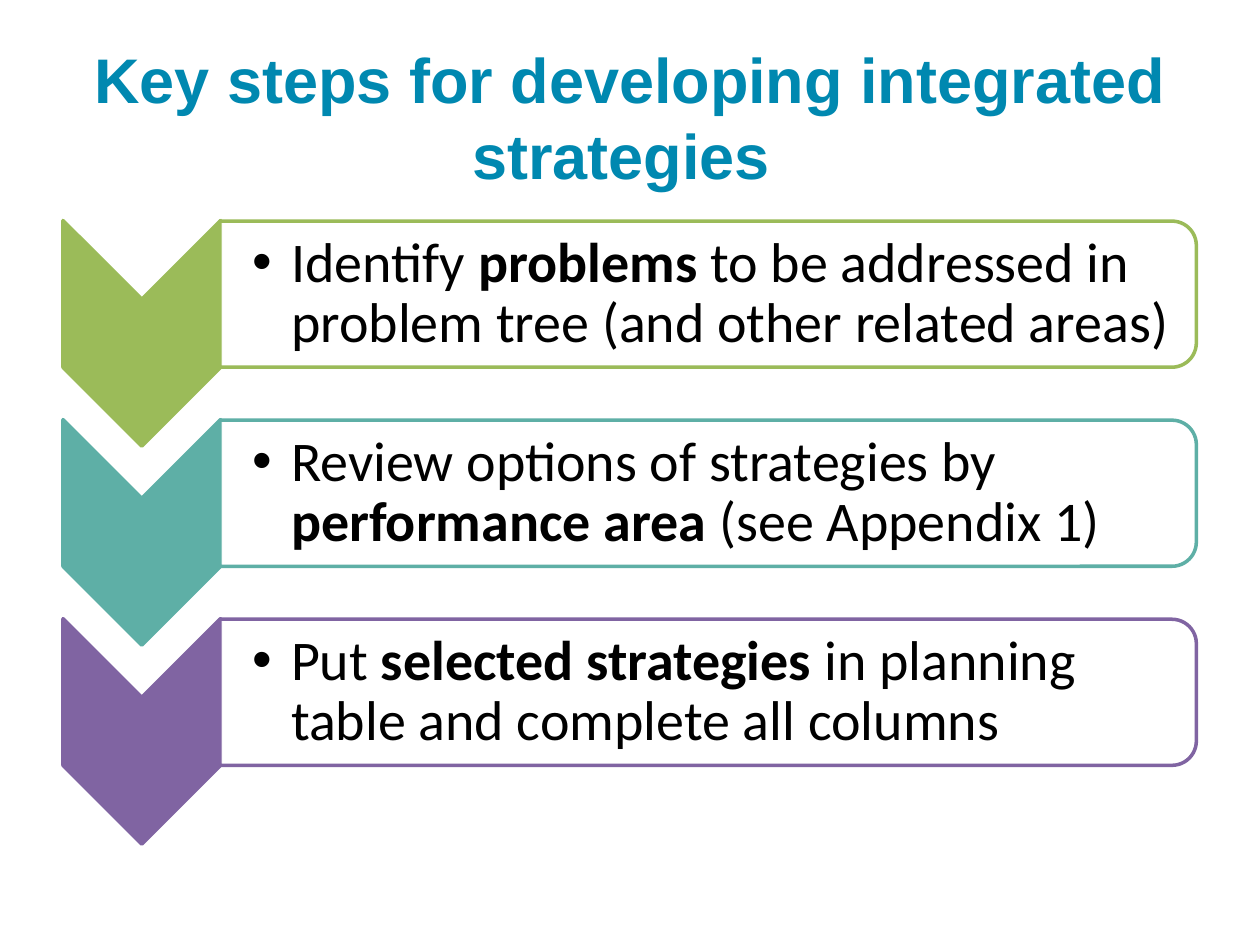
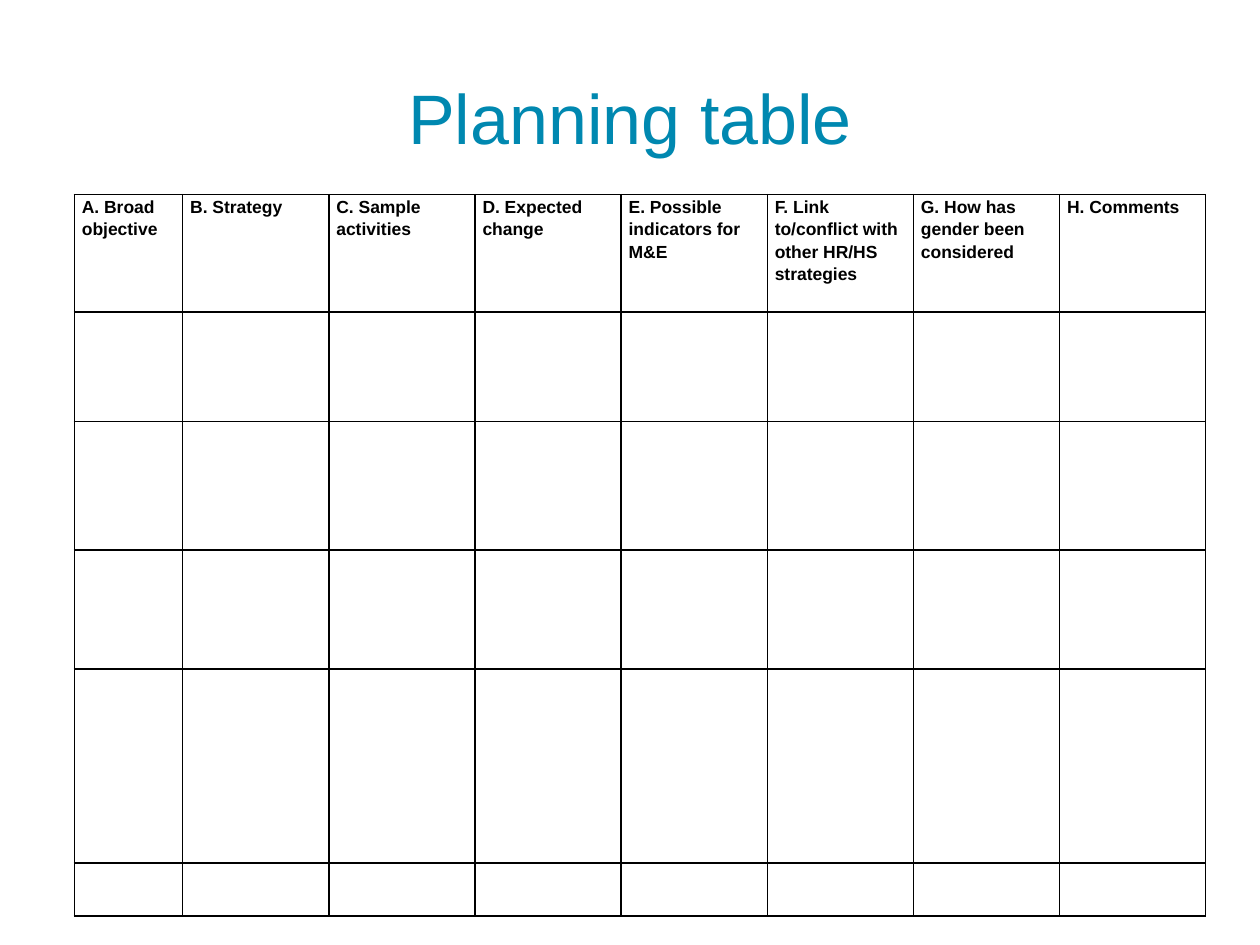
"""Build two slides on strategy planning: the key steps and the planning table."""
import pptx
import pptx.dml.color
import pptx.enum.shapes
import pptx.enum.text
import pptx.oxml
import pptx.oxml.ns
import pptx.util
from lxml import etree

RGB = pptx.dml.color.RGBColor
Pt = pptx.util.Pt
MSO = pptx.enum.shapes.MSO_SHAPE
ALIGN = pptx.enum.text.PP_ALIGN
ANCHOR = pptx.enum.text.MSO_ANCHOR
qn = pptx.oxml.ns.qn

BLUE = RGB(0x00, 0x88, 0xB0)
GREEN = RGB(0x9B, 0xBB, 0x59)
TEAL = RGB(0x5E, 0xAF, 0xA6)
PURPLE = RGB(0x80, 0x64, 0xA2)
BLACK = RGB(0, 0, 0)
WHITE = RGB(255, 255, 255)

GRID_COLS = 20
STEP_TOP = 3.5
STEP_PITCH = 3.16
STEPS = [
    (GREEN, "Identify *problems* to be addressed in problem tree (and other related areas)"),
    (TEAL, "Review options of strategies by *performance area *(see Appendix 1)"),
    (PURPLE, "Put *selected strategies *in planning table and complete all columns"),
]
HEADERS = [
    "A. Broad objective", "B. Strategy", "C. Sample activities", "D. Expected change",
    "E. Possible indicators for M&E", "F. Link to/conflict with other HR/HS strategies",
    "G. How has gender been considered", "H. Comments",
]
COL_WIDTHS = [1.72] + [2.32] * 7
ROW_HEIGHTS = [1.86, 1.74, 2.04, 1.89, 3.08, 0.84]


def write(tf, text, size=18, font="Arial", color=BLACK, bold=False, align=ALIGN.LEFT,
          spacing=1.0, before=0, after=0, hang=0):
    """Fill a text frame; words between asterisks turn bold."""
    p = tf.paragraphs[0]
    p.alignment, p.line_spacing = align, spacing
    p.space_before, p.space_after = Pt(before), Pt(after)
    for i, part in enumerate(text.split("*")):
        r = p.add_run()
        r.text = part
        r.font.size, r.font.name = Pt(size), font
        r.font.color.rgb = color
        r.font.bold = bold or i % 2 == 1
    if hang:
        pPr = p._p.get_or_add_pPr()
        pPr.set("marL", str(hang))
        pPr.set("indent", str(-hang))
        etree.SubElement(pPr, qn("a:buFont")).set("typeface", "Arial")
        etree.SubElement(pPr, qn("a:buChar")).set("char", "•")


class Deck:
    """Hold the style, the grid and the current slide."""

    def __init__(self):
        """Start a 10 by 7.5 inch presentation."""
        self.prs = pptx.Presentation()
        self.prs.slide_width = pptx.util.Inches(10)
        self.prs.slide_height = pptx.util.Inches(7.5)
        self.s = None

    def cells(self, *lengths):
        """Turn grid cells into slide lengths."""
        return [pptx.util.Emu(round(n * self.prs.slide_width / GRID_COLS)) for n in lengths]

    def slide(self, title, size, bold=False):
        """Add a blank slide with its title."""
        self.s = self.prs.slides.add_slide(self.prs.slide_layouts[6])
        self.text((1, 0.6, 18, 2.5), title, (0.2, 0.1, 0.2, 0.1), size=size, color=BLUE,
                  bold=bold, align=ALIGN.CENTER)

    def text(self, box, text, insets, **style):
        """Add a wrapped text box centred on its height."""
        tf = self.s.shapes.add_textbox(*self.cells(*box)).text_frame
        tf.word_wrap, tf.vertical_anchor = True, ANCHOR.MIDDLE
        tf.margin_left, tf.margin_top, tf.margin_right, tf.margin_bottom = self.cells(*insets)
        write(tf, text, **style)

    def turned(self, kind, box, fill, line, alpha=None):
        """Add a shape turned a quarter so that it covers the box."""
        x, y, w, h = box
        sp = self.s.shapes.add_shape(
            kind, *self.cells(x + (w - h) / 2, y + (h - w) / 2, h, w))
        sp.rotation = 90
        sp.shadow.inherit = False
        sp.fill.solid()
        sp.fill.fore_color.rgb = fill
        sp.line.color.rgb, sp.line.width = line, Pt(2)
        if alpha:
            color = sp._element.spPr.find(qn("a:solidFill"))[0]
            etree.SubElement(color, qn("a:alpha")).set("val", str(alpha * 1000))

    def step(self, top, color, text):
        """Add a chevron with its framed bullet."""
        self.turned(MSO.CHEVRON, (1, top, 2.5, 3.58), color, color)
        self.turned(MSO.ROUND_2_SAME_RECTANGLE, (3.49, top + 0.01, 15.5, 2.32),
                    WHITE, color, alpha=90)
        self.text((3.5, top + 0.12, 15.38, 2.1), text, (0.5, 0.04, 0.04, 0.04), size=32,
                  font="Calibri", spacing=0.9, hang=self.cells(0.62)[0])

    def table(self, left, top, widths, heights, headers):
        """Add a ruled table with a header row."""
        table = self.s.shapes.add_table(
            len(heights), len(widths),
            *self.cells(left, top, sum(widths), sum(heights))).table
        table.first_row = table.horz_banding = False
        for col, width in zip(table.columns, self.cells(*widths)):
            col.width = width
        for row, height in zip(table.rows, self.cells(*heights)):
            row.height = height
        for cell in table.iter_cells():
            cell.margin_left, cell.margin_right = self.cells(0.12, 0.12)
            cell.margin_top = cell.margin_bottom = 0
            cell.fill.background()
            self.borders(cell)
        for cell, header in zip(table.rows[0].cells, headers):
            write(cell.text_frame, header, size=10, bold=True, spacing=1.15,
                  before=2.8, after=5.7)

    def borders(self, cell):
        """Rule all four sides of a cell."""
        tcPr = cell._tc.get_or_add_tcPr()
        for i, side in enumerate("LRTB"):
            ln = etree.Element(qn(f"a:ln{side}"), w=str(Pt(1)))
            fill = etree.SubElement(ln, qn("a:solidFill"))
            etree.SubElement(fill, qn("a:srgbClr")).set("val", str(BLACK))
            tcPr.insert(i, ln)


def main():
    """Build and save the slides."""
    deck = Deck()
    deck.slide("Key steps for developing integrated strategies ", 36, bold=True)
    for i, (color, text) in enumerate(STEPS):
        deck.step(STEP_TOP + i * STEP_PITCH, color, text)
    deck.slide("Planning table", 40)
    deck.table(1.18, 3.09, COL_WIDTHS, ROW_HEIGHTS, HEADERS)
    deck.prs.save("out.pptx")


if __name__ == "__main__":
    main()
